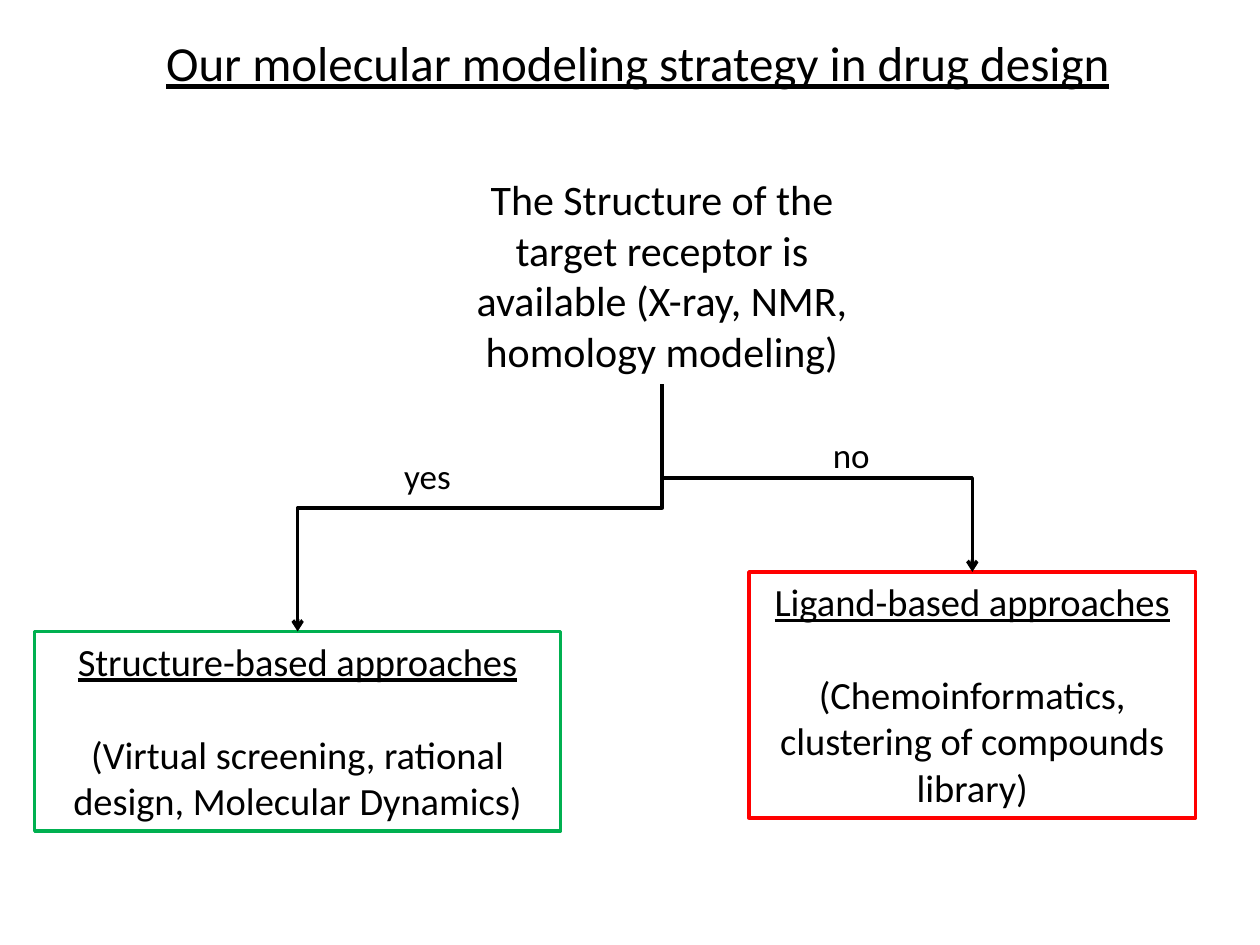
import dataclasses

import lxml.etree
import pptx
import pptx.dml.color
import pptx.enum.shapes
import pptx.enum.text
import pptx.oxml.ns
import pptx.util

Cm = pptx.util.Cm
Pt = pptx.util.Pt
qn = pptx.oxml.ns.qn
ALIGN = pptx.enum.text.PP_ALIGN


@dataclasses.dataclass(frozen=True)
class Theme:
    font: str = "Calibri"
    ink: str = "000000"
    green: str = "00B050"
    red: str = "FF0000"
    title_size: float = 28
    question_size: float = 24
    approach_size: float = 22
    label_size: float = 20
    line_width: float = 2
    heading_gap: float = 26.8


class SlideBuilder:
    def __init__(self, slide, theme):
        self.slide = slide
        self.theme = theme

    def color(self, value):
        return pptx.dml.color.RGBColor.from_string(value)

    def add_run(self, paragraph, text, size, underline=False):
        run = paragraph.add_run()
        run.text = text
        run.font.name = self.theme.font
        run.font.size = Pt(size)
        run.font.underline = underline
        run.font.color.rgb = self.color(self.theme.ink)

    def text(self, box, text, size, align=ALIGN.LEFT, wrap=False, underline=False):
        shape = self.slide.shapes.add_textbox(*map(Cm, box))
        shape.text_frame.word_wrap = wrap
        paragraph = shape.text_frame.paragraphs[0]
        paragraph.alignment = align
        self.add_run(paragraph, text, size, underline)
        return shape

    def approach(self, box, heading, methods, outline):
        shape = self.slide.shapes.add_shape(
            pptx.enum.shapes.MSO_SHAPE.RECTANGLE, *map(Cm, box))
        shape.shadow.inherit = False
        shape.fill.background()
        shape.line.color.rgb = self.color(outline)
        shape.line.width = Pt(self.theme.line_width)
        frame = shape.text_frame
        frame.word_wrap = True
        frame.vertical_anchor = pptx.enum.text.MSO_ANCHOR.TOP
        heading_paragraph = frame.paragraphs[0]
        methods_paragraph = frame.add_paragraph()
        methods_paragraph.space_before = Pt(self.theme.heading_gap)
        for paragraph in frame.paragraphs:
            paragraph.alignment = ALIGN.CENTER
        self.add_run(heading_paragraph, heading, self.theme.approach_size, True)
        self.add_run(methods_paragraph, methods, self.theme.approach_size)
        return shape

    def branch(self, source, target):
        start_x = source.left + source.width // 2
        start_y = source.top + source.height
        end_x = target.left + target.width // 2
        center_x = (start_x + end_x) // 2
        center_y = (start_y + target.top) // 2
        direction = 1 if end_x > start_x else -1
        half_drop = direction * (target.top - start_y) // 2
        half_span = abs(end_x - start_x) // 2
        connector = self.slide.shapes.add_connector(
            pptx.enum.shapes.MSO_CONNECTOR.ELBOW,
            center_x + half_drop, center_y - half_span,
            center_x - half_drop, center_y + half_span)
        connector.line.color.rgb = self.color(self.theme.ink)
        connector.line.width = Pt(self.theme.line_width)
        properties = connector._element.spPr
        quarter_turns = 3 if direction > 0 else 1
        properties.find(qn("a:xfrm")).set("rot", str(quarter_turns * 5400000))
        lxml.etree.SubElement(properties.find(qn("a:ln")), qn("a:tailEnd"), type="arrow")
        lxml.etree.SubElement(properties, qn("a:effectLst"))


def main():
    presentation = pptx.Presentation()
    presentation.slide_width = Cm(25.4)
    presentation.slide_height = Cm(19.05)
    theme = Theme()
    slide = presentation.slides.add_slide(presentation.slide_layouts[6])
    builder = SlideBuilder(slide, theme)

    builder.text((3.1, 0.53, 19.74, 1.45),
                 "Our molecular modeling strategy in drug design",
                 theme.title_size, underline=True)
    question = builder.text(
        (8.9, 3.38, 8.89, 4.37),
        "The Structure of the target receptor is available (X-ray, NMR, homology modeling)",
        theme.question_size, ALIGN.CENTER, wrap=True)
    structure_based = builder.approach(
        (0.7, 12.73, 10.6, 4.02), "Structure-based approaches",
        "(Virtual screening, rational design, Molecular Dynamics)", theme.green)
    ligand_based = builder.approach(
        (15.1, 11.53, 9, 4.96), "Ligand-based approaches",
        "(Chemoinformatics, clustering of compounds library)", theme.red)
    for target in (structure_based, ligand_based):
        builder.branch(question, target)
    builder.text((7.9, 9.04, 1.47, 1.12), "yes", theme.label_size)
    builder.text((16.54, 8.61, 1.27, 1.12), "no", theme.label_size)

    presentation.save("out.pptx")


if __name__ == "__main__":
    main()
